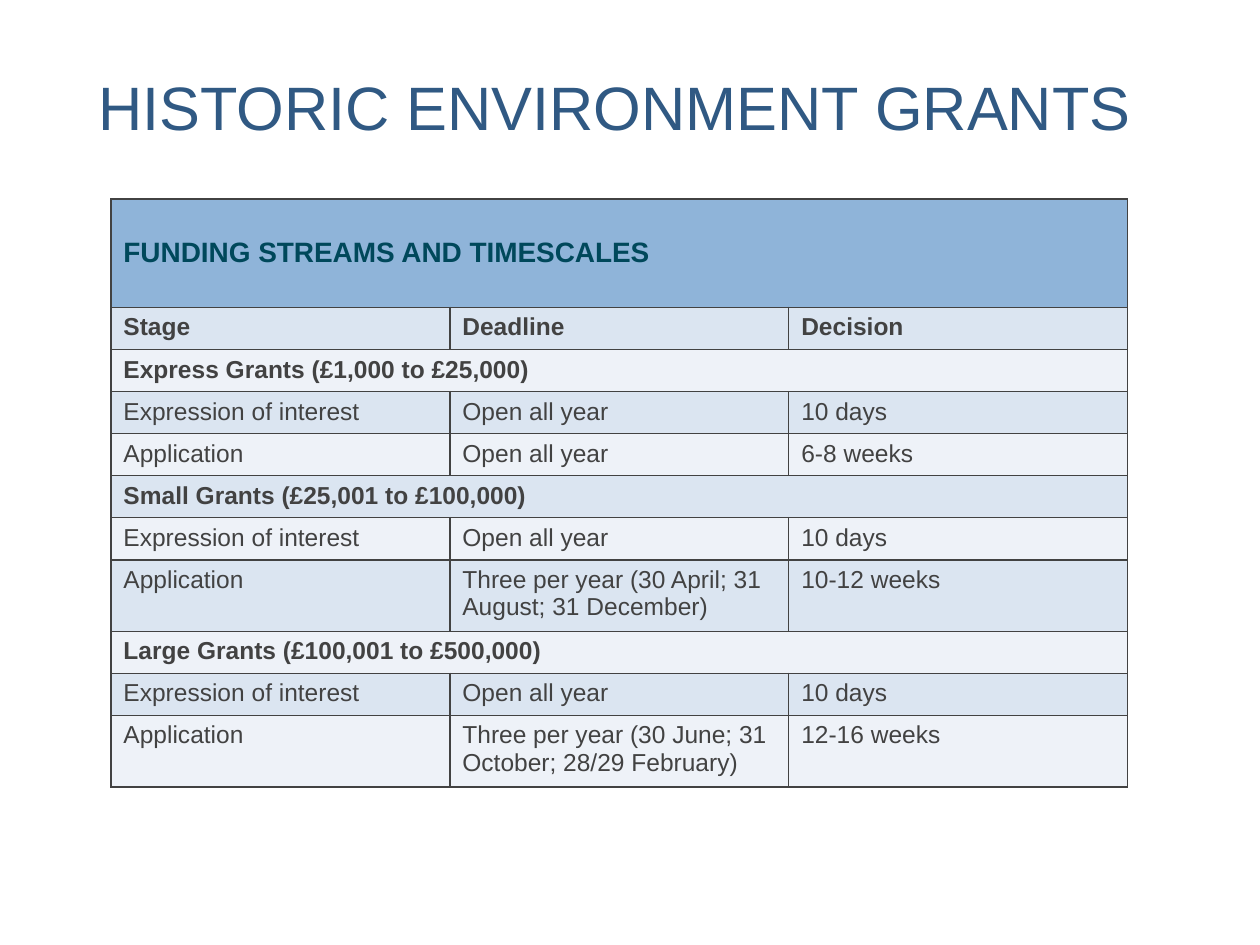
"""Build the historic environment grants slide with its funding timetable."""
from lxml import etree
from pptx import Presentation
from pptx import util as u
from pptx.dml.color import RGBColor
from pptx.enum import text
from pptx.oxml.ns import qn

TITLE = "HISTORIC ENVIRONMENT GRANTS"
BANNER = "FUNDING STREAMS AND TIMESCALES"
HEADINGS = ("Stage", "Deadline", "Decision")
INTEREST = ("Expression of interest", "Open all year", "10 days")
STREAMS = [
    ("Express Grants (£1,000 to £25,000)", "Open all year", "6-8 weeks"),
    ("Small Grants (£25,001 to £100,000)",
     "Three per year (30 April; 31 August; 31 December)", "10-12 weeks"),
    ("Large Grants (£100,001 to £500,000)",
     "Three per year (30 June; 31 October; 28/29 February)", "12-16 weeks"),
]

FONT = "Arial"
TITLE_BLUE = RGBColor(0x30, 0x59, 0x83)
BANNER_TEAL = RGBColor(0x00, 0x48, 0x5B)
BANNER_BLUE = RGBColor(0x8F, 0xB4, 0xD9)
GREY = RGBColor(0x42, 0x42, 0x42)
BANDS = (RGBColor(0xEE, 0xF2, 0xF8), RGBColor(0xDB, 0xE5, 0xF1))

BANNER_HEIGHT, LINE_HEIGHT, TWO_LINE_HEIGHT = 0.86, 0.32, 0.55
COLUMN_WIDTH = 2.69
ONE_LINE_CHARS = 40


def style(paragraph, size, color, bold=False):
    font = paragraph.font if not paragraph.runs else paragraph.runs[0].font
    font.name, font.size, font.bold = FONT, u.Pt(size), bold
    font.color.rgb = color


def add_borders(cell):
    properties = cell._tc.get_or_add_tcPr()
    for position, side in enumerate(("a:lnL", "a:lnR", "a:lnT", "a:lnB")):
        line = etree.Element(qn(side), w=str(u.Pt(1)))
        fill = etree.SubElement(line, qn("a:solidFill"))
        etree.SubElement(fill, qn("a:srgbClr"), val=str(GREY))
        properties.insert(position, line)


def add_title(slide):
    box = slide.shapes.add_textbox(u.Inches(0.78), u.Inches(0.55), u.Inches(8.73), u.Inches(0.66))
    frame = box.text_frame
    frame.word_wrap = True
    frame.margin_left = frame.margin_right = frame.margin_top = frame.margin_bottom = 0
    frame.text = TITLE
    style(frame.paragraphs[0], 35, TITLE_BLUE)


def add_timetable(slide):
    rows = [(BANNER,), HEADINGS]
    for stream, deadline, decision in STREAMS:
        rows += [(stream,), INTEREST, ("Application", deadline, decision)]
    heights = [BANNER_HEIGHT] + [
        TWO_LINE_HEIGHT if max(map(len, row)) > ONE_LINE_CHARS else LINE_HEIGHT
        for row in rows[1:]]
    columns = len(HEADINGS)
    table = slide.shapes.add_table(
        len(rows), columns, u.Inches(0.88), u.Inches(1.58),
        u.Inches(COLUMN_WIDTH * columns), u.Inches(sum(heights))).table
    for column in table.columns:
        column.width = u.Inches(COLUMN_WIDTH)

    for index, (row, height) in enumerate(zip(rows, heights)):
        table.rows[index].height = u.Inches(height)
        is_banner = index == 0
        is_bold = len(row) == 1 or row is HEADINGS
        if len(row) == 1:
            table.cell(index, 0).merge(table.cell(index, columns - 1))
        for column in range(columns):
            cell = table.cell(index, column)
            cell.fill.solid()
            cell.fill.fore_color.rgb = BANNER_BLUE if is_banner else BANDS[index % 2]
            add_borders(cell)
            if column < len(row):
                cell.text = row[column]
                style(cell.text_frame.paragraphs[0], 16 if is_banner else 14,
                      BANNER_TEAL if is_banner else GREY, is_bold)
        if is_banner:
            table.cell(index, 0).vertical_anchor = text.MSO_ANCHOR.MIDDLE


def main():
    deck = Presentation()
    deck.slide_width, deck.slide_height = u.Inches(10), u.Inches(7.5)
    slide = deck.slides.add_slide(deck.slide_layouts[6])
    add_title(slide)
    add_timetable(slide)
    deck.save("out.pptx")


if __name__ == "__main__":
    main()
